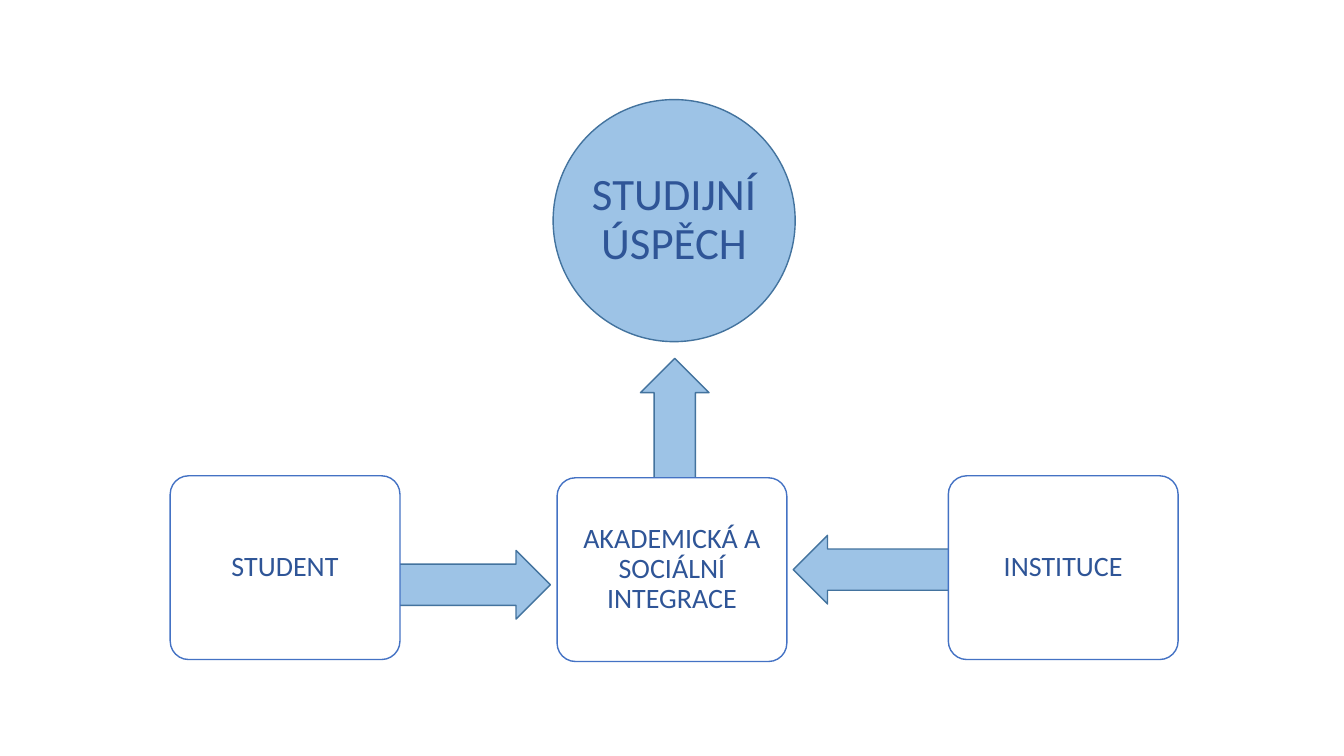
import pptx
import pptx.dml.color
import pptx.enum.shapes
import pptx.enum.text
import pptx.util

Cm = pptx.util.Cm
Pt = pptx.util.Pt
PRESET = pptx.enum.shapes.MSO_SHAPE

WHITE = "FFFFFF"
SKY = "9DC3E6"
STEEL = "43739E"
BLUE = "4472C4"
NAVY = "2F5597"


def color(hex_value):
    """Turn a hex string into a colour."""
    return pptx.dml.color.RGBColor.from_string(hex_value)


def add_outlined(page, preset, left, top, width, height, fill, line):
    """Add a flat shape with a solid fill and a thin outline."""
    shape = page.shapes.add_shape(preset, Cm(left), Cm(top), Cm(width), Cm(height))
    shape.shadow.inherit = False
    shape.fill.solid()
    shape.fill.fore_color.rgb = color(fill)
    shape.line.color.rgb = color(line)
    shape.line.width = Pt(1)
    return shape


def write(shape, text, *, size, inset, font="Calibri", ink=NAVY):
    """Write centred text into a shape."""
    frame = shape.text_frame
    frame.word_wrap = True
    frame.vertical_anchor = pptx.enum.text.MSO_ANCHOR.MIDDLE
    frame.margin_left = frame.margin_right = Cm(inset)
    frame.margin_top = frame.margin_bottom = Cm(inset)
    para = frame.paragraphs[0]
    para.alignment = pptx.enum.text.PP_ALIGN.CENTER
    para.line_spacing = 0.9
    span = para.add_run()
    span.text = text
    span.font.size = Pt(size)
    span.font.name = font
    span.font.color.rgb = color(ink)


def add_goal(page, text, left, top, diameter):
    """Add the circle that names the goal."""
    circle = add_outlined(page, PRESET.OVAL, left, top, diameter, diameter, SKY, STEEL)
    write(circle, text, size=32, inset=0.05)


def add_arrow(page, left, top, rotation):
    """Add a block arrow that points left before it is rotated."""
    arrow = add_outlined(page, PRESET.LEFT_ARROW, left, top, 5.61, 1.73, SKY, STEEL)
    arrow.adjustments[0] = 0.6
    arrow.adjustments[1] = 0.5
    arrow.rotation = rotation


def add_factor(page, text, left, top):
    """Add a rounded box that names a factor."""
    box = add_outlined(
        page, PRESET.ROUNDED_RECTANGLE, left, top, 5.79, 4.63, WHITE, BLUE
    )
    box.adjustments[0] = 0.1
    write(box, text, size=20, inset=0.1)


def main():
    """Build the slide and save the deck."""
    deck = pptx.Presentation()
    deck.slide_width = Cm(33.87)
    deck.slide_height = Cm(19.05)
    page = deck.slides.add_slide(deck.slide_layouts[6])

    add_goal(page, "STUDIJNÍ ÚSPĚCH", 13.94, 2.51, 6.1)
    for left, top, rotation in (
        (19.99, 13.49, 0),
        (8.26, 13.87, 180),
        (14.2, 10.97, 90),
    ):
        add_arrow(page, left, top, rotation)
    for text, left, top in (
        ("INSTITUCE", 23.9, 11.99),
        ("STUDENT", 4.29, 11.99),
        ("AKADEMICKÁ A SOCIÁLNÍ INTEGRACE", 14.04, 12.04),
    ):
        add_factor(page, text, left, top)

    deck.save("out.pptx")


if __name__ == "__main__":
    main()
